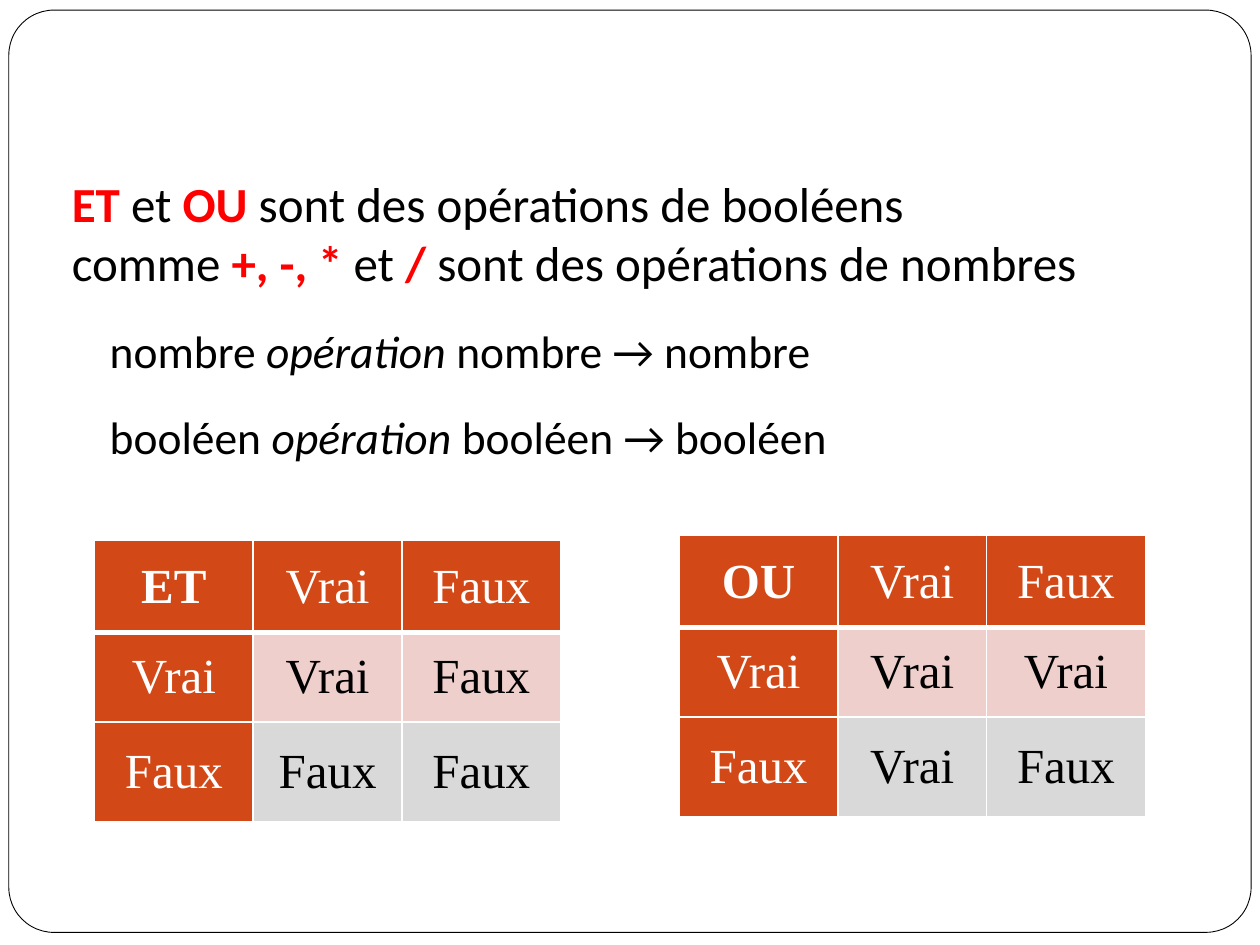
from dataclasses import dataclass

import pptx
import pptx.dml.color
import pptx.enum.shapes
import pptx.enum.text
import pptx.util
from lxml import etree
from pptx.oxml.ns import qn


@dataclass(frozen=True)
class Theme:
    body_font: str = "Calibri"
    table_font: str = "Times New Roman"
    large: int = 28
    medium: int = 26
    black: str = "000000"
    white: str = "FFFFFF"
    accent: str = "FF0000"
    header: str = "D34817"
    bands: tuple = ("EFCFCC", "D9D9D9")


THEME = Theme()
WIDTH, HEIGHT = 10, 7.5

# Each paragraph is (level, lines); *...* style is given per run: "", "key" or "italic".
PARAGRAPHS = [
    (0, [
        [("ET ", "key"), ("et ", ""), ("OU ", "key"), ("sont des opérations de booléens", "")],
        [("comme ", ""), ("+, -, * ", "key"), ("et", ""), (" / ", "key"),
         ("sont des opérations de nombres", "")],
    ]),
    (1, [[("nombre ", ""), ("opération", "italic"), (" nombre → nombre", "")]]),
    (1, [[("booléen ", ""), ("opération", "italic"), (" booléen → booléen", "")]]),
]
TRUTH_TABLES = [
    ((0.75, 4.29), [("ET", "Vrai", "Faux"), ("Vrai", "Vrai", "Faux"), ("Faux", "Faux", "Faux")]),
    ((5.39, 4.25), [("OU", "Vrai", "Faux"), ("Vrai", "Vrai", "Vrai"), ("Faux", "Vrai", "Faux")]),
]
COLUMNS = (1.26, 1.18, 1.26)
ROWS = (0.73, 0.71, 0.79)


def inches(*values):
    return [pptx.util.Inches(v) for v in values]


def rgb(value):
    return pptx.dml.color.RGBColor.from_string(value)


def style_run(r, font, size, color, bold=False, italic=False):
    r.font.name = font
    r.font.size = pptx.util.Pt(size)
    r.font.color.rgb = rgb(color)
    r.font.bold = bold
    r.font.italic = italic


def add_frame(s):
    margin = 0.07
    frame = s.shapes.add_shape(
        pptx.enum.shapes.MSO_SHAPE.ROUNDED_RECTANGLE,
        *inches(margin, 0.08, WIDTH - 2 * margin, 7.32))
    frame.adjustments[0] = 0.049
    frame.shadow.inherit = False
    frame.fill.solid()
    frame.fill.fore_color.rgb = rgb(THEME.white)
    frame.line.color.rgb = rgb(THEME.black)
    frame.line.width = pptx.util.Pt(0.5)
    s.shapes._spTree.insert(2, frame._element)  # behind the body text


def fill_body(body):
    body.left, body.top, body.width, body.height = inches(0.47, 1.33, 9.07, 5.65)
    tf = body.text_frame
    tf.auto_size = pptx.enum.text.MSO_AUTO_SIZE.NONE
    for i, (level, lines) in enumerate(PARAGRAPHS):
        p = tf.add_paragraph() if i else tf.paragraphs[0]
        p.level = level
        p.space_before = pptx.util.Pt(0)
        p.space_after = pptx.util.Pt(18)
        pPr = p._p.get_or_add_pPr()
        pPr.set("marL", str(pptx.util.Inches(0.3 * level)))
        pPr.set("indent", "0")
        etree.SubElement(pPr, qn("a:buNone"))
        for n, line in enumerate(lines):
            if n:
                p.add_line_break()
            for text, style in line:
                r = p.add_run()
                r.text = text
                key = style == "key"
                style_run(r, THEME.body_font, THEME.medium if level else THEME.large,
                          THEME.accent if key else THEME.black, key, style == "italic")


def set_borders(cell, row):
    """White borders, with a thick rule between the header and the first row."""
    widths = {"lnL": 1, "lnR": 1, "lnT": 3 if row == 1 else 1, "lnB": 3 if row == 0 else 1}
    tcPr = cell._tc.get_or_add_tcPr()
    for i, (side, width) in enumerate(widths.items()):
        ln = etree.Element(qn(f"a:{side}"), w=str(pptx.util.Pt(width)))
        fill = etree.SubElement(ln, qn("a:solidFill"))
        etree.SubElement(fill, qn("a:srgbClr"), val=THEME.white)
        tcPr.insert(i, ln)


def add_truth_table(s, origin, values):
    table = s.shapes.add_table(
        len(ROWS), len(COLUMNS), *inches(*origin, sum(COLUMNS), sum(ROWS))).table
    for column, width in zip(table.columns, COLUMNS):
        column.width = pptx.util.Inches(width)
    for row, height in zip(table.rows, ROWS):
        row.height = pptx.util.Inches(height)
    for i, texts in enumerate(values):
        for j, text in enumerate(texts):
            cell = table.cell(i, j)
            is_header = i == 0 or j == 0
            cell.fill.solid()
            cell.fill.fore_color.rgb = rgb(THEME.header if is_header else THEME.bands[i - 1])
            cell.vertical_anchor = pptx.enum.text.MSO_ANCHOR.MIDDLE
            set_borders(cell, i)
            p = cell.text_frame.paragraphs[0]
            p.text = text
            p.alignment = pptx.enum.text.PP_ALIGN.CENTER
            p.space_before = p.space_after = pptx.util.Pt(6)
            style_run(p.runs[0], THEME.table_font, THEME.large,
                      THEME.white if is_header else THEME.black, bold=i == j == 0)


def main():
    prs = pptx.Presentation()
    prs.slide_width, prs.slide_height = inches(WIDTH, HEIGHT)
    s = prs.slides.add_slide(prs.slide_layouts[1])
    title = s.shapes.title._element
    title.getparent().remove(title)
    fill_body(s.placeholders[1])
    add_frame(s)
    for origin, values in TRUTH_TABLES:
        add_truth_table(s, origin, values)
    prs.save("out.pptx")


if __name__ == "__main__":
    main()
